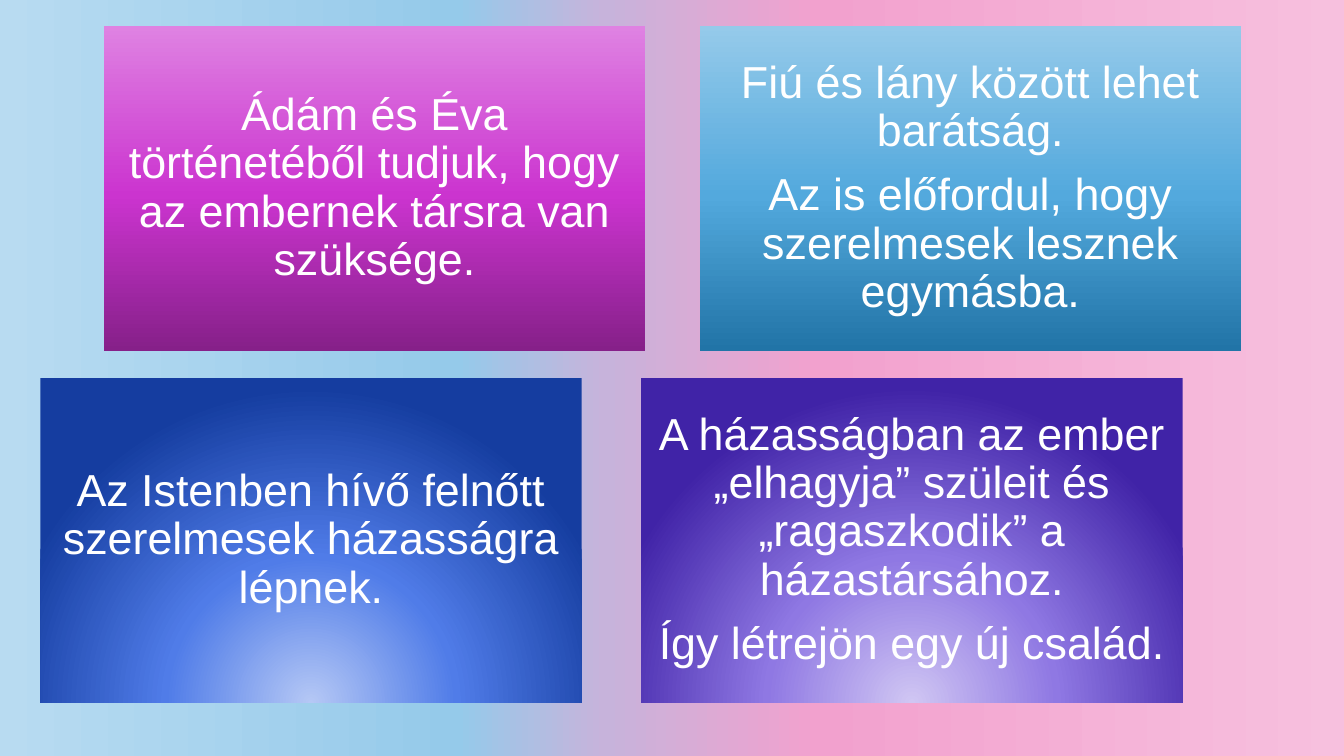
from lxml import etree
from pptx import Presentation
from pptx import util as u
from pptx.dml import color
from pptx.enum import shapes, text
from pptx.oxml import ns

INK = {
    "text": "FFFFFF",
    "sky": [(0, "B8DBF1"), (34, "95CAEA"), (45, "C7B3DB"), (61, "F2A1CE"), (100, "F7C0DE")],
    "pink": [(0, "862089"), (48, "CB34CF"), (100, "DF82E2")],
    "aqua": [(0, "2174A7"), (48, "53A9DD"), (100, "95CAEA")],
    "blue": [(0, "B5C8F5"), (46, "507CE8"), (100, "153DA0")],
    "plum": [(0, "D0C6F3"), (46, "8F78E3"), (100, "4023A7")],
}


class Deck:
    font, size = "Arial", 32
    wide, high, inset = 5.37, 3.22, 0.13

    def __init__(self):
        self.prs = Presentation()
        self.prs.slide_width = u.Inches(13.33)
        self.prs.slide_height = u.Inches(7.5)
        self.slide = self.prs.slides.add_slide(self.prs.slide_layouts[6])

    def blend(self, fill, owner, stops, angle=None):
        """Linear gradient at an angle, or a glow from below without one."""
        fill.gradient()
        grad = owner.find(".//" + ns.qn("a:gradFill"))
        for part in list(grad):
            grad.remove(part)

        def add(home, tag, **attrs):
            return etree.SubElement(home, ns.qn(tag), {k: str(v) for k, v in attrs.items()})

        row = add(grad, "a:gsLst")
        for pos, tint in stops:
            add(add(row, "a:gs", pos=pos * 1000), "a:srgbClr", val=tint)
        if angle is None:
            glow = add(grad, "a:path", path="circle")
            add(glow, "a:fillToRect", l=50000, t=130000, r=50000, b=-30000)
        else:
            add(grad, "a:lin", ang=angle * 60000, scaled=0)

    def back(self, tint):
        self.blend(self.slide.background.fill, self.slide.element, INK[tint], 0)

    def card(self, left, top, tint, angle, lines):
        box = self.slide.shapes.add_shape(
            shapes.MSO_SHAPE.RECTANGLE, u.Inches(left), u.Inches(top),
            u.Inches(self.wide), u.Inches(self.high))
        box.shadow.inherit = False
        box.line.fill.background()
        self.blend(box.fill, box.element, INK[tint], angle)

        # Text
        frame = box.text_frame
        frame.word_wrap = True
        frame.vertical_anchor = text.MSO_ANCHOR.MIDDLE
        for side in ("left", "top", "right", "bottom"):
            setattr(frame, "margin_" + side, u.Inches(self.inset))
        frame.text = "\n".join(lines)
        for para in frame.paragraphs:
            para.alignment = text.PP_ALIGN.CENTER
            para.line_spacing = 0.9
            para.space_after = u.Pt(self.size * 0.35)
            for run in para.runs:
                run.font.name = self.font
                run.font.size = u.Pt(self.size)
                run.font.color.rgb = color.RGBColor.from_string(INK["text"])


def main():
    deck = Deck()
    deck.back("sky")

    # Upper row: linear cards; lower row: glowing cards
    top, low = 0.26, 3.75
    deck.card(1.03, top, "pink", 270, [
        "Ádám és Éva történetéből tudjuk, hogy az embernek társra van szüksége."])
    deck.card(6.94, top, "aqua", 270, [
        "Fiú és lány között lehet barátság.",
        "Az is előfordul, hogy szerelmesek lesznek egymásba."])
    deck.card(0.4, low, "blue", None, [
        "Az Istenben hívő felnőtt szerelmesek házasságra lépnek."])
    deck.card(6.36, low, "plum", None, [
        "A házasságban az ember „elhagyja” szüleit és „ragaszkodik” a házastársához.",
        "Így létrejön egy új család."])

    deck.prs.save("out.pptx")


if __name__ == "__main__":
    main()
